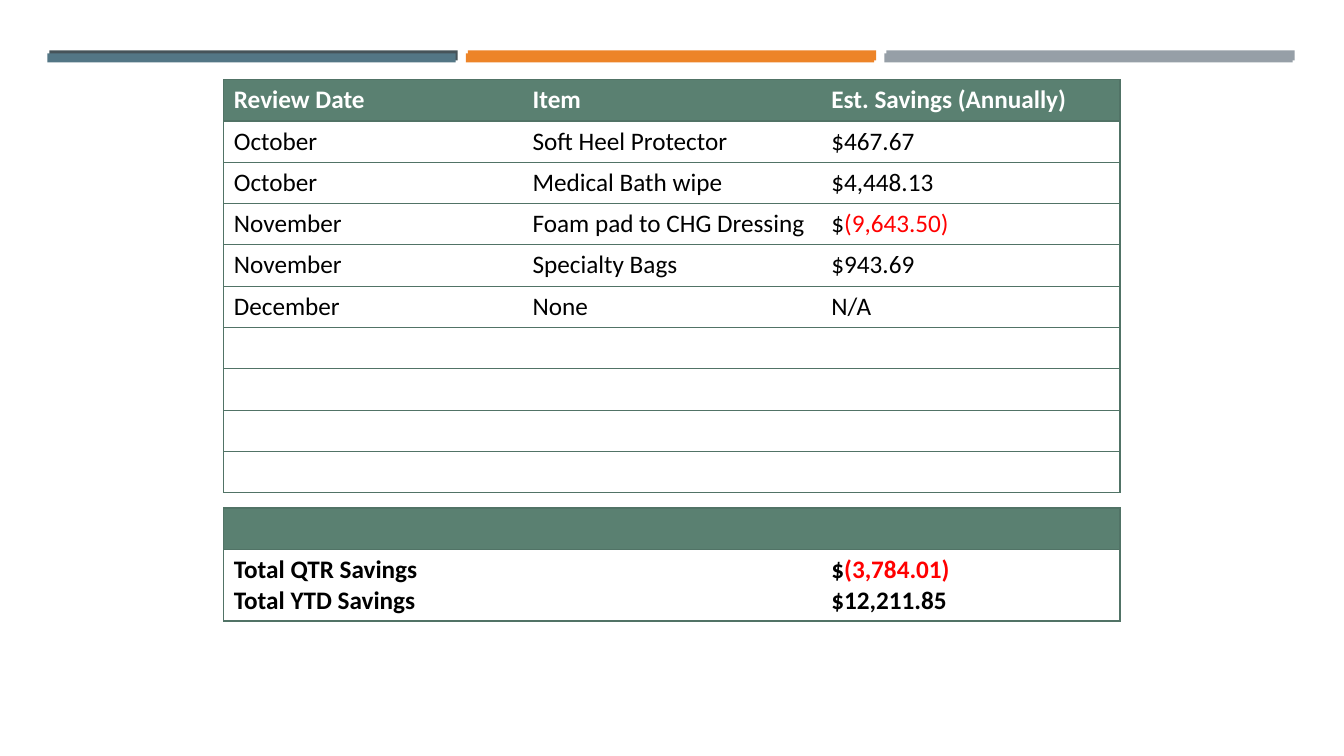
from dataclasses import dataclass

import lxml.etree
import pptx
import pptx.dml.color
import pptx.enum.shapes
import pptx.oxml.ns
import pptx.util
from pptx.util import Inches


@dataclass(frozen=True)
class Theme:
    font: str = "Calibri"
    size: int = 18
    border_width: int = 1
    header: str = "5A8071"
    border: str = "517366"
    white: str = "FFFFFF"
    black: str = "000000"
    red: str = "FF0000"
    bars: tuple = (("465359", "537685"), ("ED8428", "ED8428"), ("969FA7", "969FA7"))


THEME = Theme()

SAVINGS = [
    ("Review Date", "Item", "Est. Savings (Annually)"),
    ("October", "Soft Heel Protector", "$467.67"),
    ("October", "Medical Bath wipe", "$4,448.13"),
    ("November", "Foam pad to CHG Dressing", "$(9,643.50)"),
    ("November", "Specialty Bags", "$943.69"),
    ("December", "None", "N/A"),
] + [("", "", "")] * 4

TOTALS = [
    ("", "", ""),
    ("Total QTR Savings\nTotal YTD Savings", "", "$(3,784.01)\n$12,211.85"),
]


def rgb(color):
    return pptx.dml.color.RGBColor.from_string(color)


def add_bar(slide, left, top, width, height, color):
    bar = slide.shapes.add_shape(
        pptx.enum.shapes.MSO_SHAPE.RECTANGLE,
        Inches(left), Inches(top), Inches(width), Inches(height))
    bar.shadow.inherit = False
    bar.fill.solid()
    bar.fill.fore_color.rgb = rgb(color)
    bar.line.fill.background()


def add_header_bars(slide, left, top):
    """Place three bars in a row, each a front strip over a slightly offset back strip."""
    width, pitch = 4.05, 4.15
    for index, (back, front) in enumerate(THEME.bars):
        bar_left = left + index * pitch
        add_bar(slide, bar_left + 0.02, top, width, 0.1, back)
        add_bar(slide, bar_left, top + 0.03, width, 0.09, front)


def set_borders(cell, visible):
    """Draw the sides named in visible (of L, R, T, B) and clear the others."""
    properties = cell._tc.get_or_add_tcPr()
    for position, side in enumerate("LRTB"):
        line = lxml.etree.Element(pptx.oxml.ns.qn(f"a:ln{side}"))
        if side in visible:
            line.set("w", str(pptx.util.Pt(THEME.border_width)))
            fill = lxml.etree.SubElement(line, pptx.oxml.ns.qn("a:solidFill"))
            color = lxml.etree.SubElement(fill, pptx.oxml.ns.qn("a:srgbClr"))
            color.set("val", THEME.border)
        else:
            lxml.etree.SubElement(line, pptx.oxml.ns.qn("a:noFill"))
        properties.insert(position, line)


def add_run(paragraph, text, color, bold):
    run = paragraph.add_run()
    run.text = text
    run.font.name = THEME.font
    run.font.size = pptx.util.Pt(THEME.size)
    run.font.bold = bold
    run.font.color.rgb = rgb(color)


def write_cell(cell, text, color, bold):
    """Write one paragraph per line, with amounts in parentheses in red."""
    for index, line in enumerate(text.split("\n") if text else []):
        frame = cell.text_frame
        paragraph = frame.paragraphs[0] if index == 0 else frame.add_paragraph()
        if line.startswith("$("):
            add_run(paragraph, "$", color, bold)
            add_run(paragraph, line[1:], THEME.red, bold)
        else:
            add_run(paragraph, line, color, bold)


def add_savings_table(slide, left, top, width, rows, heights, bold_body=False):
    columns = len(rows[0])
    table = slide.shapes.add_table(
        len(rows), columns, Inches(left), Inches(top),
        Inches(width), Inches(sum(heights))).table
    table.horz_banding = False
    for column in table.columns:
        column.width = Inches(width / columns)
    for row_index, (texts, height) in enumerate(zip(rows, heights)):
        table.rows[row_index].height = Inches(height)
        is_header = row_index == 0
        for column_index, text in enumerate(texts):
            cell = table.cell(row_index, column_index)
            cell.fill.solid()
            cell.fill.fore_color.rgb = rgb(THEME.header if is_header else THEME.white)
            sides = "TB"
            if column_index == 0:
                sides += "L"
            if column_index == columns - 1:
                sides += "R"
            set_borders(cell, sides)
            write_cell(cell, text, THEME.white if is_header else THEME.black,
                       is_header or bold_body)


def main():
    presentation = pptx.Presentation()
    presentation.slide_width = Inches(13.33)
    presentation.slide_height = Inches(7.5)
    slide = presentation.slides.add_slide(presentation.slide_layouts[6])
    add_header_bars(slide, 0.47, 0.5)
    add_savings_table(slide, 2.22, 0.79, 8.89, SAVINGS, [0.41] * len(SAVINGS))
    add_savings_table(slide, 2.22, 5.04, 8.89, TOTALS, [0.41, 0.7], bold_body=True)
    presentation.save("out.pptx")


if __name__ == "__main__":
    main()
